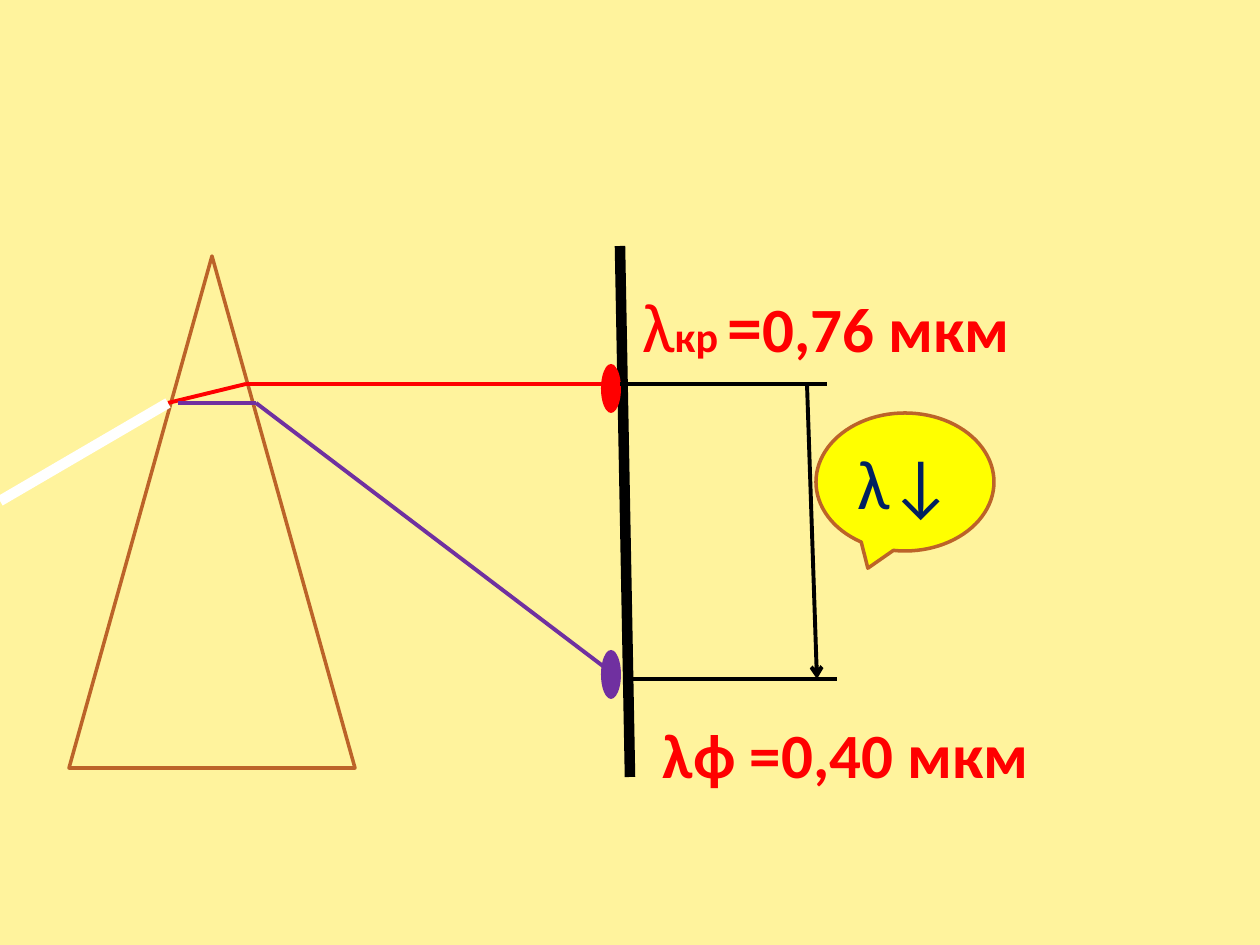
from dataclasses import dataclass

from lxml.etree import SubElement
from pptx import Presentation
from pptx.dml.color import RGBColor
from pptx.enum.shapes import MSO_CONNECTOR as Connector, MSO_SHAPE as Preset
from pptx.enum.text import MSO_ANCHOR as Anchor, MSO_AUTO_SIZE as AutoSize, PP_ALIGN as Align
from pptx.oxml.ns import qn
from pptx.util import Emu, Pt

EMU_PER_PX = 914400 / 126


@dataclass(frozen=True)
class Theme:
    font: str = "Calibri"
    sand: str = "FFF39D"
    brown: str = "BC6329"
    red: str = "FF0000"
    violet: str = "7030A0"
    yellow: str = "FFFF00"
    navy: str = "002060"
    black: str = "000000"
    white: str = "FFFFFF"
    large: int = 40
    medium: int = 36
    small: int = 24
    outline: float = 2
    ray: float = 2.25
    thick: float = 6


THEME = Theme()


def px(value):
    return Emu(round(value * EMU_PER_PX))


def color(code):
    return RGBColor.from_string(code)


def add_figure(page, preset, bounds, fill, line=None):
    figure = page.shapes.add_shape(preset, *map(px, bounds))
    figure.shadow.inherit = False
    figure.fill.solid()
    figure.fill.fore_color.rgb = color(fill)
    if line:
        figure.line.color.rgb = color(line)
        figure.line.width = Pt(THEME.outline)
    else:
        figure.line.fill.background()
    return figure


def add_line(page, start, end, code, width=THEME.ray, arrow=False):
    line = page.shapes.add_connector(Connector.STRAIGHT, *map(px, start + end))
    line.line.color.rgb = color(code)
    line.line.width = Pt(width)
    properties = line._element.spPr
    if arrow:
        SubElement(properties.find(qn("a:ln")), qn("a:tailEnd"), type="arrow")
    SubElement(properties, qn("a:effectLst"))


def add_path(page, points, code):
    for start, end in zip(points, points[1:]):
        add_line(page, start, end, code)


def add_span(para, text, size, code, bold=False):
    span = para.add_run()
    span.text = text
    span.font.name = THEME.font
    span.font.size = Pt(size)
    span.font.bold = bold
    span.font.color.rgb = color(code)


def add_label(page, bounds, spans, wrap):
    box = page.shapes.add_textbox(*map(px, bounds))
    frame = box.text_frame
    frame.word_wrap = wrap
    frame.auto_size = AutoSize.SHAPE_TO_FIT_TEXT
    for text, size, bold in spans:
        add_span(frame.paragraphs[0], text, size, THEME.red, bold)


def add_callout(page, bounds, text):
    callout = add_figure(page, Preset.OVAL_CALLOUT, bounds, THEME.yellow, THEME.brown)
    frame = callout.text_frame
    frame.vertical_anchor = Anchor.MIDDLE
    para = frame.paragraphs[0]
    para.alignment = Align.CENTER
    add_span(para, text, THEME.large, THEME.navy)


def main():
    deck = Presentation()
    deck.slide_width, deck.slide_height = px(1260), px(945)
    page = deck.slides.add_slide(deck.slide_layouts[6])
    page.background.fill.solid()
    page.background.fill.fore_color.rgb = color(THEME.sand)

    red_y, violet_y = 384, 679
    entry = (168, 403)
    add_figure(page, Preset.ISOSCELES_TRIANGLE, (69, 256, 286, 512), THEME.sand, THEME.brown)
    add_line(page, (620, 246), (630, 777), THEME.black, THEME.thick)
    add_path(page, [entry, (246, red_y), (620, red_y)], THEME.red)
    add_path(page, [(178, 403), (256, 403), (620, violet_y)], THEME.violet)
    for top, code in ((364, THEME.red), (650, THEME.violet)):
        add_figure(page, Preset.OVAL, (601, top, 20, 49), code)

    for left, level in ((620, red_y), (630, violet_y)):
        add_line(page, (left, level), (left + 207, level), THEME.black)
    add_line(page, (807, red_y), (817, violet_y), THEME.black, arrow=True)
    add_callout(page, (816, 413, 178, 138), "λ↓")
    add_line(page, (0, 501), entry, THEME.white, THEME.thick)

    red_spans = [
        ("λ", THEME.large, False),
        ("кр ", THEME.small, True),
        ("=", THEME.large, True),
        ("0,76 мкм", THEME.medium, True),
    ]
    add_label(page, (630, 276, 452, 97), red_spans, True)
    add_label(page, (650, 709, 410, 89), [("λф =0,40 мкм", THEME.medium, True)], False)
    deck.save("out.pptx")


if __name__ == "__main__":
    main()
